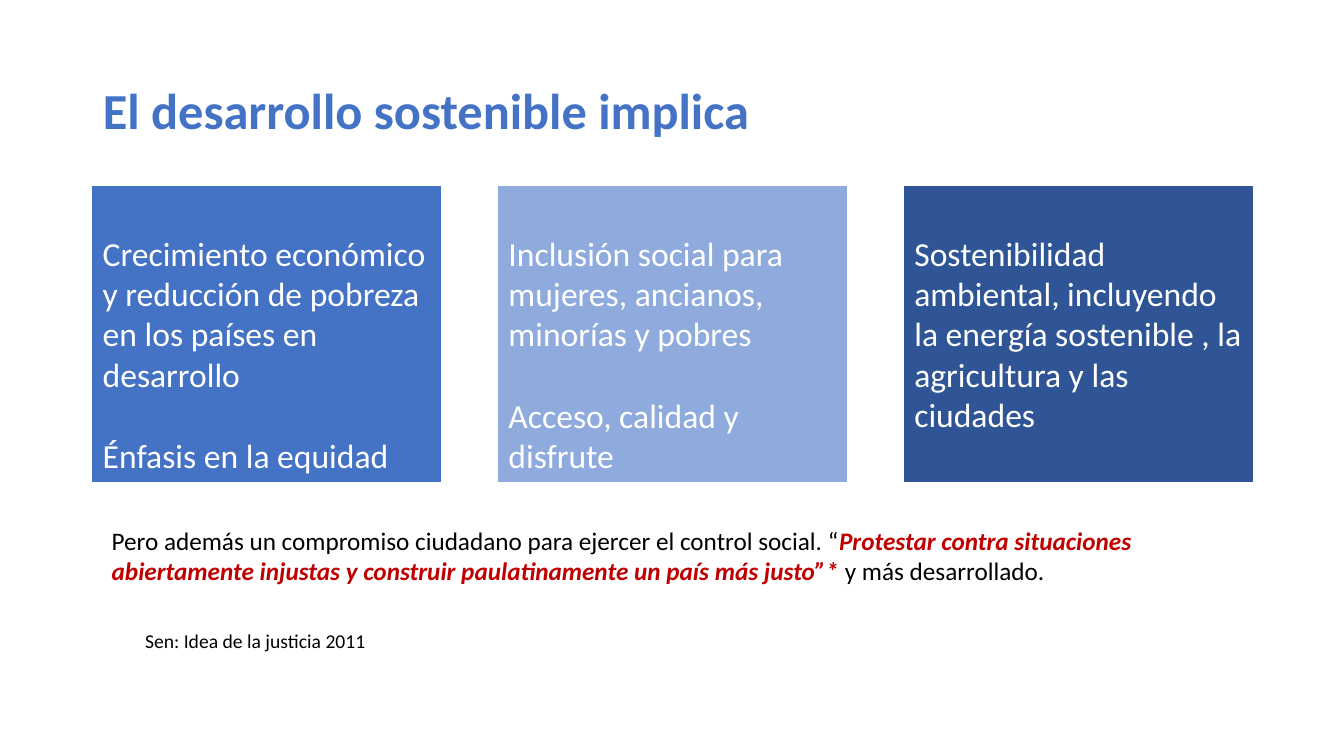
from pptx import Presentation
from pptx.dml.color import RGBColor
from pptx.enum.shapes import MSO_SHAPE
from pptx.enum.text import MSO_ANCHOR, PP_ALIGN
from pptx.util import Inches, Pt

BLUE = RGBColor(0x44, 0x72, 0xC4)
LIGHT_BLUE = RGBColor(0x8F, 0xAA, 0xDC)
DARK_BLUE = RGBColor(0x2F, 0x55, 0x97)
RED = RGBColor(0xC0, 0x00, 0x00)
WHITE = RGBColor(0xFF, 0xFF, 0xFF)
BLACK = RGBColor(0x00, 0x00, 0x00)

# Content
TITLE = "El desarrollo sostenible implica"
PILLARS = [
    (BLUE, ["Crecimiento económico y reducción de pobreza en los países en desarrollo",
            "Énfasis en la equidad"]),
    (LIGHT_BLUE, ["Inclusión social para mujeres, ancianos, minorías y pobres",
                  "Acceso, calidad y disfrute"]),
    (DARK_BLUE, ["Sostenibilidad ambiental, incluyendo la energía sostenible , "
                 "la agricultura y las ciudades"]),
]
PLAIN = dict(size=Pt(18))
QUOTED = dict(size=Pt(18), color=RED, bold=True, italic=True)
COMMITMENT = [
    ("Pero además un compromiso ciudadano para ejercer el control social. “", PLAIN),
    ("Protestar contra situaciones abiertamente injustas y construir "
     "paulatinamente un país más justo”* ", QUOTED),
    ("y más desarrollado.", PLAIN),
]
SOURCE = [("Sen: Idea de la justicia 2011", dict(size=Pt(14)))]
NOTES = [((1.01, 5.16, 11.26, 0.71), COMMITMENT),
         ((1.34, 6.19, 3.29, 0.34), SOURCE)]

# Grid: three equal columns inside the side margins
SLIDE_W, SLIDE_H = 13.33, 7.5
MARGIN, CONTENT_W = 0.92, 11.5
ROW_TOP, ROW_H, COL_W = 1.85, 2.93, 3.45
PITCH = (CONTENT_W - COL_W) / (len(PILLARS) - 1)
BLANK_LINE = Pt(29.3)


def add_run(p, text, color=BLACK, **formats):
    r = p.add_run()
    r.text = text
    r.font.color.rgb = color
    for name, value in dict(name="Calibri", **formats).items():
        setattr(r.font, name, value)


prs = Presentation()
prs.slide_width, prs.slide_height = Inches(SLIDE_W), Inches(SLIDE_H)
s = prs.slides.add_slide(prs.slide_layouts[5])

# Title
title = s.shapes.title
box = dict(left=MARGIN, top=0.4, width=CONTENT_W, height=ROW_TOP - 0.4)
for name, value in box.items():
    setattr(title, name, Inches(value))
title.text_frame.vertical_anchor = MSO_ANCHOR.MIDDLE
p = title.text_frame.paragraphs[0]
p.alignment, p.line_spacing = PP_ALIGN.LEFT, 0.9
add_run(p, TITLE, BLUE, size=Pt(36), bold=True)

# Pillars
for i, (color, paragraphs) in enumerate(PILLARS):
    sp = s.shapes.add_shape(
        MSO_SHAPE.RECTANGLE, Inches(MARGIN + i * PITCH), Inches(ROW_TOP),
        Inches(COL_W), Inches(ROW_H))
    sp.shadow.inherit = False
    sp.fill.solid()
    sp.fill.fore_color.rgb = sp.line.color.rgb = color
    sp.line.width = Pt(0.75)
    tf = sp.text_frame
    tf.word_wrap, tf.vertical_anchor = True, MSO_ANCHOR.TOP
    tf.margin_top = Inches(0.05) + BLANK_LINE
    for j, text in enumerate(paragraphs):
        p = tf.add_paragraph() if j else tf.paragraphs[0]
        p.alignment = PP_ALIGN.LEFT
        p.space_before = BLANK_LINE if j else Pt(0)
        add_run(p, text, WHITE, size=Pt(24))

# Commitment and source
for place, runs in NOTES:
    tf = s.shapes.add_textbox(*map(Inches, place)).text_frame
    tf.word_wrap = True
    for text, formats in runs:
        add_run(tf.paragraphs[0], text, **formats)

prs.save("out.pptx")
